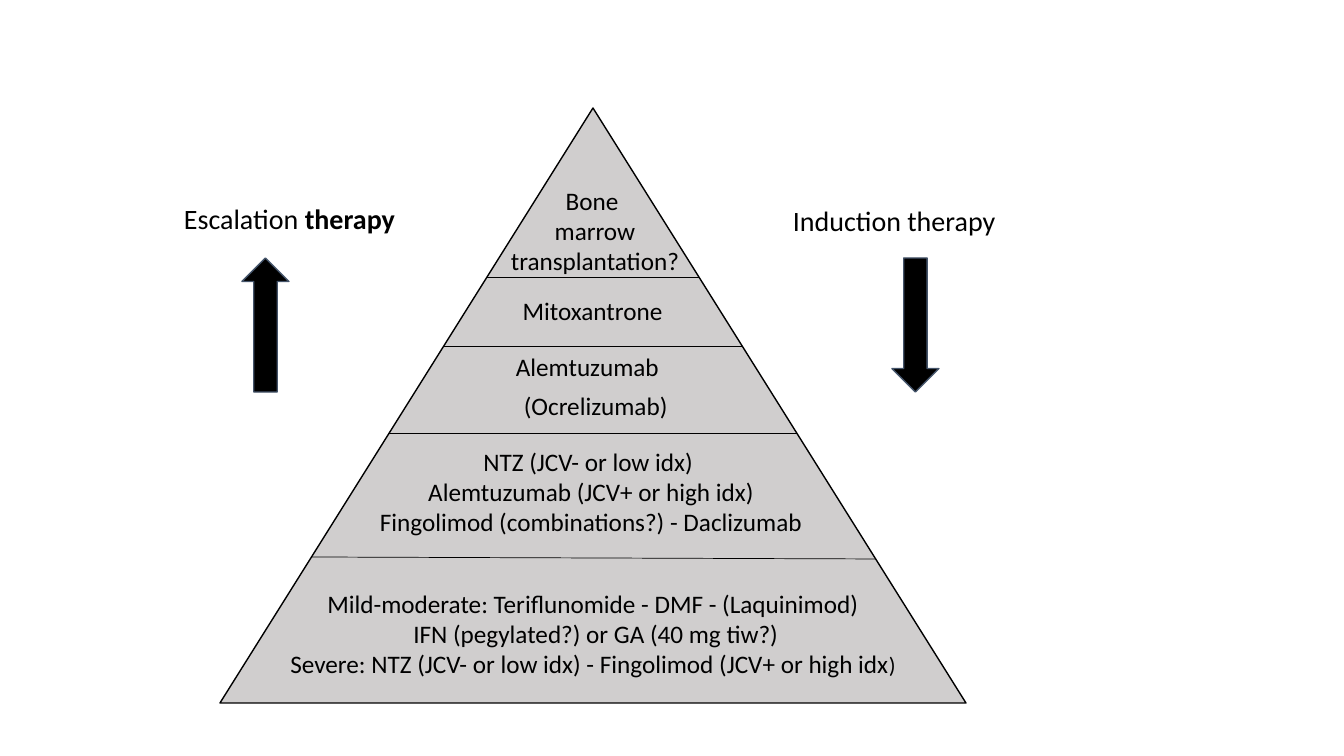
from pptx import Presentation
from pptx import util as u
from pptx.dml.color import RGBColor
from pptx.enum import shapes, text
from lxml import etree

BLACK = RGBColor(0x00, 0x00, 0x00)
GREY = RGBColor(0xD0, 0xCE, 0xCE)
SLATE = RGBColor(0x44, 0x54, 0x6A)
FONT = "Calibri"
CENTER, LEFT = text.PP_ALIGN.CENTER, text.PP_ALIGN.LEFT

SLIDE = (1344, 756)
PYRAMID = (220, 108, 746, 595)  # left, top, width, height
DIVIDERS = [(277, 277), (346, 346), (433, 433), (557, 559)]  # y at left and right edge

# box, alignment, size, paragraphs; a paragraph is a list of (text, font changes)
LABELS = [
    ((500, 180, 190, 102), CENTER, 18, [[("Bone \vmarrow\vtransplantation?", {})]]),
    ((509, 290, 167, 40), CENTER, 18, [[("Mitoxantrone", {})]]),
    ((506, 346, 165, 40), LEFT, 18, [[("Alemtuzumab", {})]]),
    ((514, 385, 165, 40), LEFT, 18, [[("(Ocrelizumab)", {})]]),
    ((367, 441, 448, 129), CENTER, 18, [
        [("NTZ (JCV- or low idx) ", {})],
        [("Alemtuzumab (JCV+ or high idx)", {})],
        [("Fingolimod (combinations?) - Daclizumab", {})],
    ]),
    ((276, 583, 634, 102), CENTER, 18, [
        [("Mild-moderate: Teriflunomide - DMF - (Laquinimod)", {})],
        [(" IFN (pegylated?) or GA (40 mg tiw?)", {})],
        [("Severe: NTZ (JCV- or low idx) - Fingolimod (JCV+ or high idx", {}),
         (")", {"size": u.Pt(16)})],
    ]),
    ((174, 197, 234, 44), LEFT, 20, [[("Escalation ", {}), ("therapy", {"bold": True})]]),
    ((783, 199, 225, 44), LEFT, 20, [[("Induction therapy", {})]]),
]
ARROWS = [
    (shapes.MSO_SHAPE.UP_ARROW, (242, 258, 47, 134)),
    (shapes.MSO_SHAPE.DOWN_ARROW, (892, 258, 47, 134)),
]


def px(*lengths):
    return [u.Emu(round(n * 914400 / 100.8)) for n in lengths]


def add_solid(slide, preset, box, fill, line):
    shape = slide.shapes.add_shape(preset, *px(*box))
    shape.shadow.inherit = False
    shape.fill.solid()
    shape.fill.fore_color.rgb = fill
    shape.line.color.rgb = line
    shape.line.width = u.Pt(1)


def edge_offset(y):
    """Distance from the pyramid's axis to its side at height y."""
    left, top, width, height = PYRAMID
    return (y - top) / height * width / 2


def add_divider(slide, left_y, right_y):
    axis = PYRAMID[0] + PYRAMID[2] / 2
    ends = px(axis - edge_offset(left_y), left_y, axis + edge_offset(right_y), right_y)
    divider = slide.shapes.add_connector(shapes.MSO_CONNECTOR.STRAIGHT, *ends)
    divider.line.color.rgb = BLACK
    divider.line.width = u.Pt(0.5)
    properties = divider.element.spPr
    etree.SubElement(properties, "{%s}effectLst" % properties.nsmap["a"])


def add_label(slide, box, align, size, paragraphs):
    frame = slide.shapes.add_textbox(*px(*box)).text_frame
    frame.word_wrap = False
    frame.auto_size = text.MSO_AUTO_SIZE.SHAPE_TO_FIT_TEXT
    for i, parts in enumerate(paragraphs):
        paragraph = frame.add_paragraph() if i else frame.paragraphs[0]
        paragraph.alignment = align
        for words, changes in parts:
            for n, line in enumerate(words.split("\v")):
                if n:
                    paragraph.add_line_break()
                run = paragraph.add_run()
                run.text = line
                run.font.color.rgb = BLACK
                for name, value in {"name": FONT, "size": u.Pt(size), **changes}.items():
                    setattr(run.font, name, value)


def main():
    deck = Presentation()
    deck.slide_width, deck.slide_height = px(*SLIDE)
    slide = deck.slides.add_slide(deck.slide_layouts[6])
    add_solid(slide, shapes.MSO_SHAPE.ISOSCELES_TRIANGLE, PYRAMID, GREY, BLACK)
    for heights in DIVIDERS:
        add_divider(slide, *heights)
    for preset, box in ARROWS:
        add_solid(slide, preset, box, BLACK, SLATE)
    for label in LABELS:
        add_label(slide, *label)
    deck.save("out.pptx")


if __name__ == "__main__":
    main()
